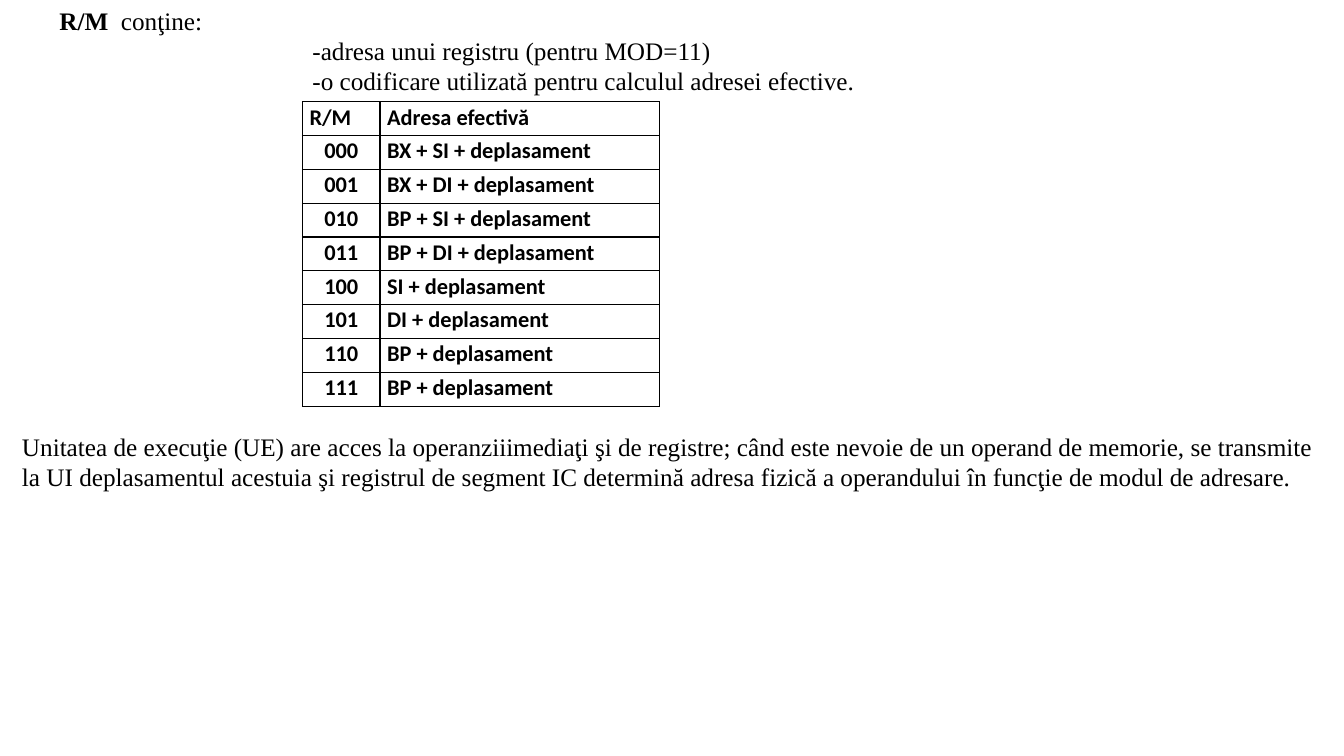
from pptx import Presentation
from pptx.dml.color import RGBColor
from pptx.enum.text import MSO_AUTO_SIZE, PP_ALIGN
from pptx.oxml import parse_xml
from pptx.oxml.ns import nsdecls
from pptx.util import Inches, Pt

BLACK = RGBColor(0, 0, 0)
JUSTIFY, CENTER, LEFT = PP_ALIGN.JUSTIFY, PP_ALIGN.CENTER, PP_ALIGN.LEFT
FIT_SHAPE = MSO_AUTO_SIZE.SHAPE_TO_FIT_TEXT
BODY_FONT, TABLE_FONT = "Times New Roman", "Calibri"
BLANK_LAYOUT = 6

ADDRESS_ROWS = [
    ("R/M", "Adresa efectivă"),
    ("000", "BX + SI + deplasament"),
    ("001", "BX + DI + deplasament"),
    ("010", "BP + SI + deplasament"),
    ("011", "BP + DI + deplasament"),
    ("100", "SI + deplasament"),
    ("101", "DI + deplasament"),
    ("110", "BP + deplasament"),
    ("111", "BP + deplasament"),
]
RM_CONTENTS = [
    "-adresa unui registru (pentru MOD=11)",
    "-o codificare utilizată pentru calculul adresei efective.",
]
EXECUTION_UNIT = (
    "Unitatea de execuţie (UE) are acces la operanziiimediaţi şi de registre; "
    "când este nevoie de un operand de memorie, se transmite la UI deplasamentul "
    "acestuia şi registrul de segment IC determină adresa fizică a operandului "
    "în funcţie de modul de adresare."
)


def write(paragraph, text, font=BODY_FONT, size=18, bold=False, align=LEFT,
          spacing=None, margin=0, first_line=0):
    """Append one formatted run and set the paragraph's layout."""
    paragraph.alignment = align
    if spacing:
        paragraph.line_spacing = spacing
    properties = paragraph._p.get_or_add_pPr()
    properties.set("marL", str(Inches(margin)))
    properties.set("indent", str(Inches(first_line)))
    run = paragraph.add_run()
    run.text = text
    run.font.name, run.font.size, run.font.bold = font, Pt(size), bold
    run.font.color.rgb = BLACK


def add_frame(slide, left, top, width, height):
    box = slide.shapes.add_textbox(Inches(left), Inches(top), Inches(width), Inches(height))
    box.text_frame.word_wrap = True
    box.text_frame.auto_size = FIT_SHAPE
    return box.text_frame


def add_borders(cell):
    properties = cell._tc.get_or_add_tcPr()
    for position, side in enumerate(("lnL", "lnR", "lnT", "lnB")):
        properties.insert(position, parse_xml(
            f'<a:{side} {nsdecls("a")} w="{Pt(1)}"><a:solidFill>'
            f'<a:srgbClr val="{BLACK}"/></a:solidFill></a:{side}>'))


def build_rm_contents(slide, left, top, width, height):
    frame = add_frame(slide, left, top, width, height)
    heading = frame.paragraphs[0]
    write(heading, "R/M  ", bold=True, align=JUSTIFY, first_line=0.49)
    write(heading, "conţine:", align=JUSTIFY, first_line=0.49)
    for item in RM_CONTENTS:
        write(frame.add_paragraph(), item, align=JUSTIFY, margin=3)


def build_address_table(slide, left, top, width, height, code_width=0.77):
    table = slide.shapes.add_table(
        len(ADDRESS_ROWS), 2, Inches(left), Inches(top), Inches(width), Inches(height)).table
    table.columns[0].width = Inches(code_width)
    table.columns[1].width = Inches(width - code_width)
    table.first_row = table.horz_banding = False
    for row, texts in enumerate(ADDRESS_ROWS):
        for column, text in enumerate(texts):
            cell = table.cell(row, column)
            cell.fill.background()
            cell.margin_left = cell.margin_right = Inches(0.07)
            cell.margin_top = cell.margin_bottom = 0
            align = CENTER if row > 0 and column == 0 else JUSTIFY
            write(cell.text_frame.paragraphs[0], text, font=TABLE_FONT, size=16,
                  bold=True, align=align, spacing=1.07)
            add_borders(cell)


def build_execution_unit(slide, left, top, width, height):
    frame = add_frame(slide, left, top, width, height)
    write(frame.paragraphs[0], EXECUTION_UNIT)


def main():
    deck = Presentation()
    deck.slide_width, deck.slide_height = Inches(13.33), Inches(7.5)
    slide = deck.slides.add_slide(deck.slide_layouts[BLANK_LAYOUT])
    # Contents of the R/M field
    build_rm_contents(slide, 0, 0, 12.35, 1.01)
    # Effective address for each R/M code
    build_address_table(slide, 3, 1.01, 3.54, 3.02)
    # Closing note on the execution unit
    build_execution_unit(slide, 0.12, 4.23, 13.07, 0.71)
    deck.save("out.pptx")


if __name__ == "__main__":
    main()
